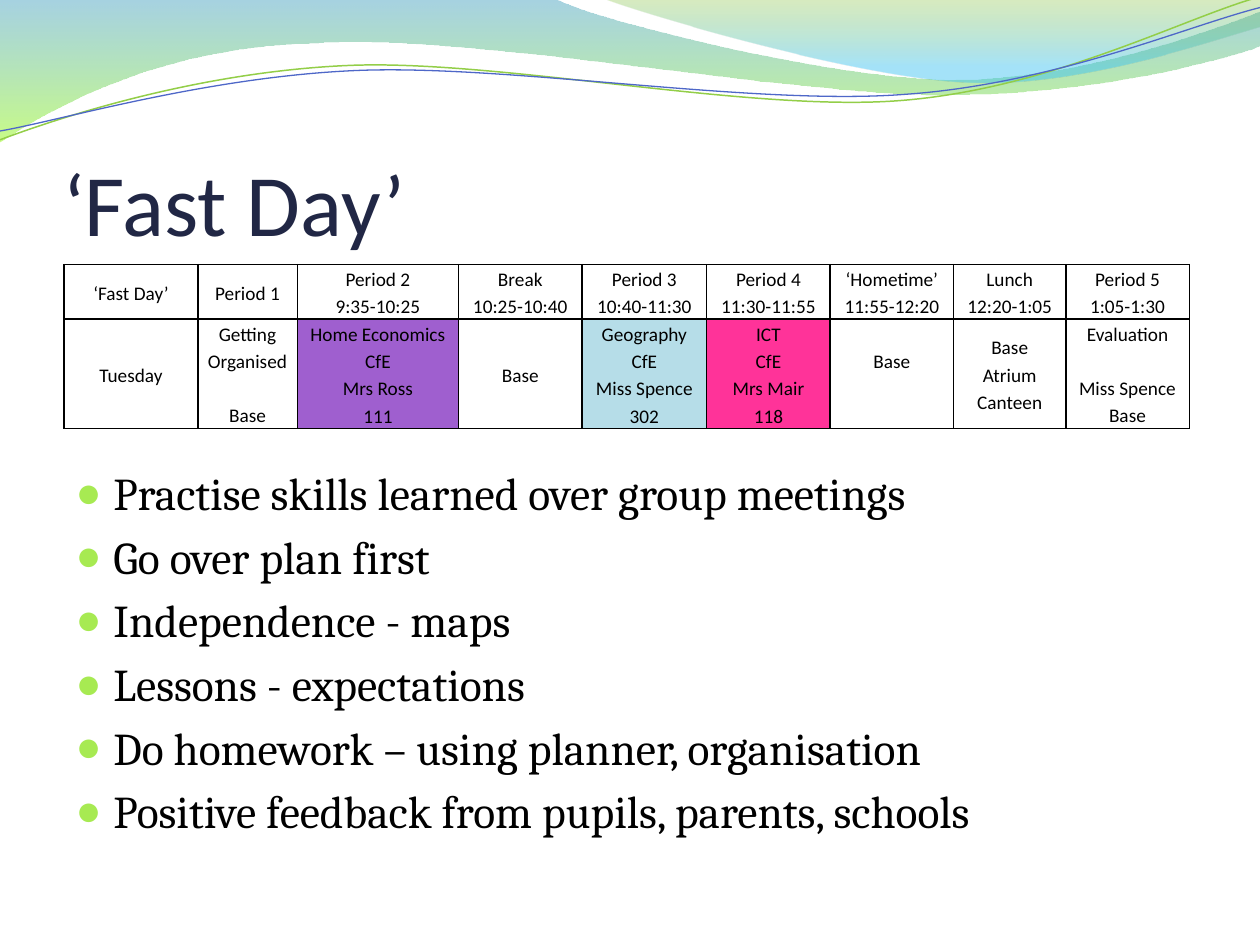
"""Build the 'Fast Day' timetable slide with its wave banner and bullet list."""
import pptx
import pptx.dml.color
import pptx.enum.text
import pptx.oxml
import pptx.oxml.ns
import pptx.util
from lxml import etree

Inches, Pt = pptx.util.Inches, pptx.util.Pt
ANCHOR, ALIGN = pptx.enum.text.MSO_ANCHOR, pptx.enum.text.PP_ALIGN
qn = pptx.oxml.ns.qn
COLORS = {
    "title": "212745", "text": "000000", "bullet": "A7EA52", "plain": "FFFFFF",
    "home": "9F5FCF", "geography": "B6DDE8", "ict": "FF3399",
    "teal": "3B9CBF", "lime": "9CFA24", "olive": "7EBE2C", "sky": "39C1F1",
    "green line": "93CE48", "blue line": "4E67C8",
}


def rgb(name):
    return pptx.dml.color.RGBColor.from_string(COLORS[name])


def style(paragraph, size, face, color):
    for run in paragraph.runs:
        run.font.size, run.font.name = Pt(size), face
        run.font.color.rgb = rgb(color)


deck = pptx.Presentation()
deck.slide_width, deck.slide_height = Inches(10), Inches(7.5)
W, H = deck.slide_width, deck.slide_height
slide = deck.slides.add_slide(deck.slide_layouts[1])
title, body = slide.shapes.title, slide.placeholders[1]

left_wave = [
    (0, 0), (4.4, -0.01), (4.76, 0.17, 6.64, 0.63, 7.58, 0.63),
    (8.53, 0.63, 9.58, 0.26, 10, 0.09), (10.01, 0.36),
    (9.83, 0.44, 8.7, 0.76, 7.46, 0.75), (6.22, 0.75, 3.82, 0.28, 2.57, 0.34),
    (1.29, 0.36, 0.46, 0.83, -0.01, 1.13),
]
right_wave = [
    (4.79, -0.01), (5.09, 0.11, 6.82, 0.62, 7.69, 0.65),
    (8.56, 0.69, 9.61, 0.32, 10, 0.21), (10, 0),
]
green_curve = [
    (0, 1.11), (0.48, 0.93, 1.58, 0.57, 2.77, 0.52),
    (3.95, 0.47, 5.93, 0.89, 7.13, 0.8), (8.33, 0.71, 9.38, 0.15, 9.98, -0.02),
]
blue_curve = [
    (0, 1.04), (0.47, 0.96, 1.64, 0.61, 2.83, 0.56),
    (4.03, 0.51, 5.97, 0.84, 7.17, 0.75), (8.36, 0.67, 9.41, 0.21, 10, 0.06),
]
banner = [
    (left_wave, [("teal", 0, 45), ("lime", 1, 55)], None),
    (right_wave, [("olive", 0, 30), ("sky", 0.8, 45)], None),
    (green_curve, None, ("green line", 0.85)),
    (blue_curve, None, ("blue line", 0.75)),
]
for outline, gradient, stroke in banner:
    ends = [(Inches(segment[-2]), Inches(segment[-1])) for segment in outline]
    builder = slide.shapes.build_freeform(*ends[0])
    builder.add_line_segments(ends[1:], close=gradient is not None)
    wave = builder.convert_to_shape()
    for straight, segment in zip(list(wave.element.iter(qn("a:lnTo"))), outline[1:]):
        if len(segment) == 6:
            bend = etree.Element(qn("a:cubicBezTo"))
            for x, y in zip(segment[::2], segment[1::2]):
                etree.SubElement(bend, qn("a:pt"), x=str(Inches(x) - wave.left),
                                 y=str(Inches(y) - wave.top))
            straight.getparent().replace(straight, bend)
    wave.shadow.inherit = False
    if gradient:
        wave.line.fill.background()
        wave.fill.gradient()
        wave.fill.gradient_angle = 270
        for stop, (color, position, opacity) in zip(wave.fill.gradient_stops, gradient):
            stop.color.rgb, stop.position = rgb(color), position
        for node, (color, position, opacity) in zip(wave.element.iter(qn("a:srgbClr")), gradient):
            etree.SubElement(node, qn("a:alpha"), val=str(opacity * 1000))
    else:
        wave.fill.background()
        wave.line.color.rgb, wave.line.width = rgb(stroke[0]), Pt(stroke[1])
    title.element.addprevious(wave.element)

title.left, title.top, title.width, title.height = int(W * 0.05), Inches(0.77), int(W * 0.9), Inches(1.25)
heading = title.text_frame
heading.text = "‘Fast Day’"
heading.auto_size = pptx.enum.text.MSO_AUTO_SIZE.NONE
heading.vertical_anchor = ANCHOR.BOTTOM
heading.margin_left = heading.margin_right = heading.margin_bottom = 0
heading.paragraphs[0].alignment = ALIGN.LEFT
style(heading.paragraphs[0], 50, "Calibri", "title")

body.left, body.top, body.width, body.height = int(W * 0.05), Inches(2.12), int(W * 0.9), int(H * 0.64)
body.text_frame.text = "\n".join([
    "Practise skills learned over group meetings",
    "Go over plan first",
    "Independence - maps",
    "Lessons - expectations",
    "Do homework – using planner, organisation",
    "Positive feedback from pupils, parents, schools",
])
body.text_frame.auto_size = pptx.enum.text.MSO_AUTO_SIZE.NONE
body.text_frame.margin_top = Inches(1.57)
for point in body.text_frame.paragraphs:
    style(point, 26, "Cambria", "text")
    point.space_before = Pt(5.2)
    props = point._p.get_or_add_pPr()
    props.set("marL", str(Inches(0.3)))
    props.set("indent", str(-Inches(0.3)))
    bullet_color = etree.SubElement(props, qn("a:buClr"))
    etree.SubElement(bullet_color, qn("a:srgbClr"), val=COLORS["bullet"])
    etree.SubElement(props, qn("a:buSzPct"), val="95000")
    etree.SubElement(props, qn("a:buChar"), char="●")

column_widths = [1.06, 0.79, 1.28, 0.98, 0.99, 0.98, 0.98, 0.89, 0.98]
row_heights = [0.43, 0.86]
LINE = 15.4
timetable = [
    ["‘Fast Day’", "Period 1", "Period 2|9:35-10:25", "Break|10:25-10:40",
     "Period 3|10:40-11:30", "Period 4|11:30-11:55", "‘Hometime’|11:55-12:20",
     "Lunch|12:20-1:05", "Period 5|1:05-1:30"],
    ["Tuesday", "Getting Organised||Base", "Home Economics|CfE|Mrs Ross|111", "Base",
     "Geography|CfE|Miss Spence|302", "ICT|CfE|Mrs Mair|118", "|Base",
     "Base Atrium Canteen", "Evaluation||Miss Spence|Base"],
]
fills = {(0, 1): "plain", (0, 3): "plain", (1, 1): "plain", (1, 2): "home",
         (1, 3): "plain", (1, 4): "geography", (1, 5): "ict"}
top_anchored = (5, 6, 8)
grid = slide.shapes.add_table(2, 9, Inches(0.51), Inches(2.1),
                              Inches(sum(column_widths)), Inches(sum(row_heights))).table
grid.first_row = grid.horz_banding = False
for column, width in zip(grid.columns, column_widths):
    column.width = Inches(width)
for r, lessons in enumerate(timetable):
    grid.rows[r].height = Inches(row_heights[r])
    for c, lesson in enumerate(lessons):
        cell = grid.cell(r, c)
        lines = lesson.split("|")
        cell.margin_left = cell.margin_right = Inches(0.07)
        cell.margin_top = 0 if lines[0] else Pt(LINE)
        cell.margin_bottom = 0
        cell.vertical_anchor = ANCHOR.TOP if c in top_anchored else ANCHOR.MIDDLE
        cell.text_frame.text = "\n".join(line for line in lines if line)
        shown = [i for i, line in enumerate(lines) if line]
        for i, entry in zip(shown, cell.text_frame.paragraphs):
            entry.alignment, entry.line_spacing = ALIGN.CENTER, 1.15
            if i > 1 and not lines[i - 1]:
                entry.space_before = Pt(LINE)
            style(entry, 11, "Calibri", "text")
        if (r, c) in fills:
            cell.fill.solid()
            cell.fill.fore_color.rgb = rgb(fills[r, c])
        else:
            cell.fill.background()
        for order, side in enumerate(("a:lnL", "a:lnR", "a:lnT", "a:lnB")):
            border = etree.Element(qn(side), w=str(Pt(1)))
            paint = etree.SubElement(border, qn("a:solidFill"))
            etree.SubElement(paint, qn("a:srgbClr"), val=COLORS["text"])
            cell._tc.get_or_add_tcPr().insert(order, border)

deck.save("out.pptx")
